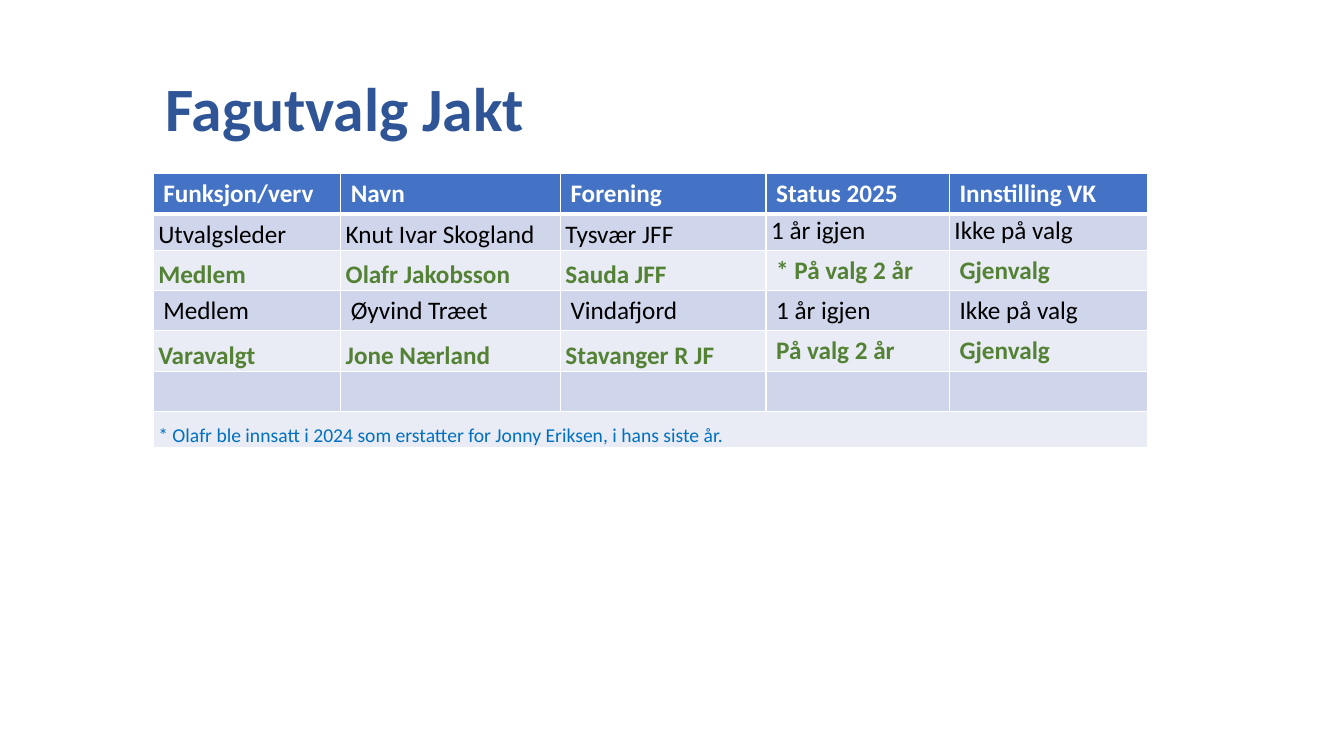
"""Build the slide listing the members of the hunting committee."""
import pptx
import pptx.dml.color
import pptx.enum.text
import pptx.oxml
import pptx.oxml.ns
import pptx.util

Pt = pptx.util.Pt
ANCHOR = pptx.enum.text.MSO_ANCHOR
FONT = "Calibri"
COLOURS = {
    "title": "2F5597",
    "header": "4472C4",
    "odd": "CFD5EA",
    "even": "E9EBF5",
    "border": "FFFFFF",
    "heading": "FFFFFF",
    "seated": "000000",
    "election": "548235",
    "footnote": "0070C0",
}
COLUMN_WIDTHS = [133.92, 156.96, 146.88, 131.04, 141.84]
ROW_HEIGHT = 26
BOTTOM_COLUMNS = 3
# Each row: role, size, bold, number of leading compact cells, texts
ROWS = [
    ("heading", 18, True, 0,
     ["Funksjon/verv", "Navn", "Forening", "Status 2025", "Innstilling VK"]),
    ("seated", 18, False, 5,
     ["Utvalgsleder", "Knut Ivar Skogland", "Tysvær JFF", "1 år igjen", "Ikke på valg"]),
    ("election", 18, True, 3,
     ["Medlem", "Olafr Jakobsson", "Sauda JFF", "* På valg 2 år", "Gjenvalg"]),
    ("seated", 18, False, 0,
     ["Medlem", "Øyvind Træet", "Vindafjord", "1 år igjen", "Ikke på valg"]),
    ("election", 18, True, 3,
     ["Varavalgt", "Jone Nærland", "Stavanger R JF", "På valg 2 år", "Gjenvalg"]),
    ("seated", 18, False, 0, [""] * 5),
    ("footnote", 14, False, 1,
     ["* Olafr ble innsatt i 2024 som erstatter for Jonny Eriksen, i hans siste år."]),
]


def rgb(name):
    """Return the named colour."""
    return pptx.dml.color.RGBColor.from_string(COLOURS[name])


def style_font(paragraph, size, bold, colour):
    """Set the font of a whole paragraph."""
    font = paragraph.font
    font.name, font.size, font.bold = FONT, Pt(size), bold
    font.color.rgb = rgb(colour)


def add_title(slide, text):
    """Add the slide heading."""
    title = slide.shapes.add_textbox(Pt(110.88), Pt(27.36), Pt(709.2), Pt(104.4))
    frame = title.text_frame
    frame.word_wrap = True
    frame.vertical_anchor = ANCHOR.MIDDLE
    heading = frame.paragraphs[0]
    heading.text = text
    heading.line_spacing = 0.9
    style_font(heading, 44, True, "title")


def add_borders(cell, bottom_width):
    """Draw white lines around a cell."""
    properties = cell._tc.get_or_add_tcPr()
    widths = {"lnL": 1, "lnR": 1, "lnT": 1, "lnB": bottom_width}
    for side, width in widths.items():
        properties.append(pptx.oxml.parse_xml(
            f'<a:{side} {pptx.oxml.ns.nsdecls("a")} w="{Pt(width)}"><a:solidFill>'
            f'<a:srgbClr val="{COLOURS["border"]}"/></a:solidFill></a:{side}>'))


def make_compact(cell, anchor):
    """Tighten the margins and spacing of a cell."""
    cell.margin_left = cell.margin_right = Pt(3.6)
    cell.margin_top = cell.margin_bottom = 0
    cell.vertical_anchor = anchor
    entry = cell.text_frame.paragraphs[0]
    entry.line_spacing = 1.05
    entry.space_after = Pt(8)


def fill_row(table, index):
    """Write and style one row of the committee table."""
    role, size, bold, compact_count, texts = ROWS[index]
    band = "header" if index == 0 else ("even", "odd")[index % 2]
    for column, cell in enumerate(table.rows[index].cells):
        add_borders(cell, 3 if index == 0 else 1)
        cell.fill.solid()
        cell.fill.fore_color.rgb = rgb(band)
        if column < len(texts):
            cell.text = texts[column]
            style_font(cell.text_frame.paragraphs[0], size, bold, role)
        if column < compact_count:
            make_compact(cell, ANCHOR.BOTTOM if column < BOTTOM_COLUMNS else ANCHOR.TOP)


def add_committee_table(slide):
    """Add the table of members with a footnote across the last row."""
    table = slide.shapes.add_table(
        len(ROWS), len(COLUMN_WIDTHS), Pt(109.44), Pt(123.84),
        Pt(sum(COLUMN_WIDTHS)), Pt(ROW_HEIGHT * len(ROWS))).table
    for column, width in zip(table.columns, COLUMN_WIDTHS):
        column.width = Pt(width)
    for index, row in enumerate(table.rows):
        row.height = Pt(ROW_HEIGHT)
        fill_row(table, index)
    last = len(ROWS) - 1
    table.cell(last, 0).merge(table.cell(last, len(COLUMN_WIDTHS) - 1))


def main():
    """Create the presentation and save it."""
    presentation = pptx.Presentation()
    presentation.slide_width, presentation.slide_height = Pt(960), Pt(540)
    slide = presentation.slides.add_slide(presentation.slide_layouts[6])
    add_title(slide, "Fagutvalg Jakt")
    add_committee_table(slide)
    presentation.save("out.pptx")


if __name__ == "__main__":
    main()
